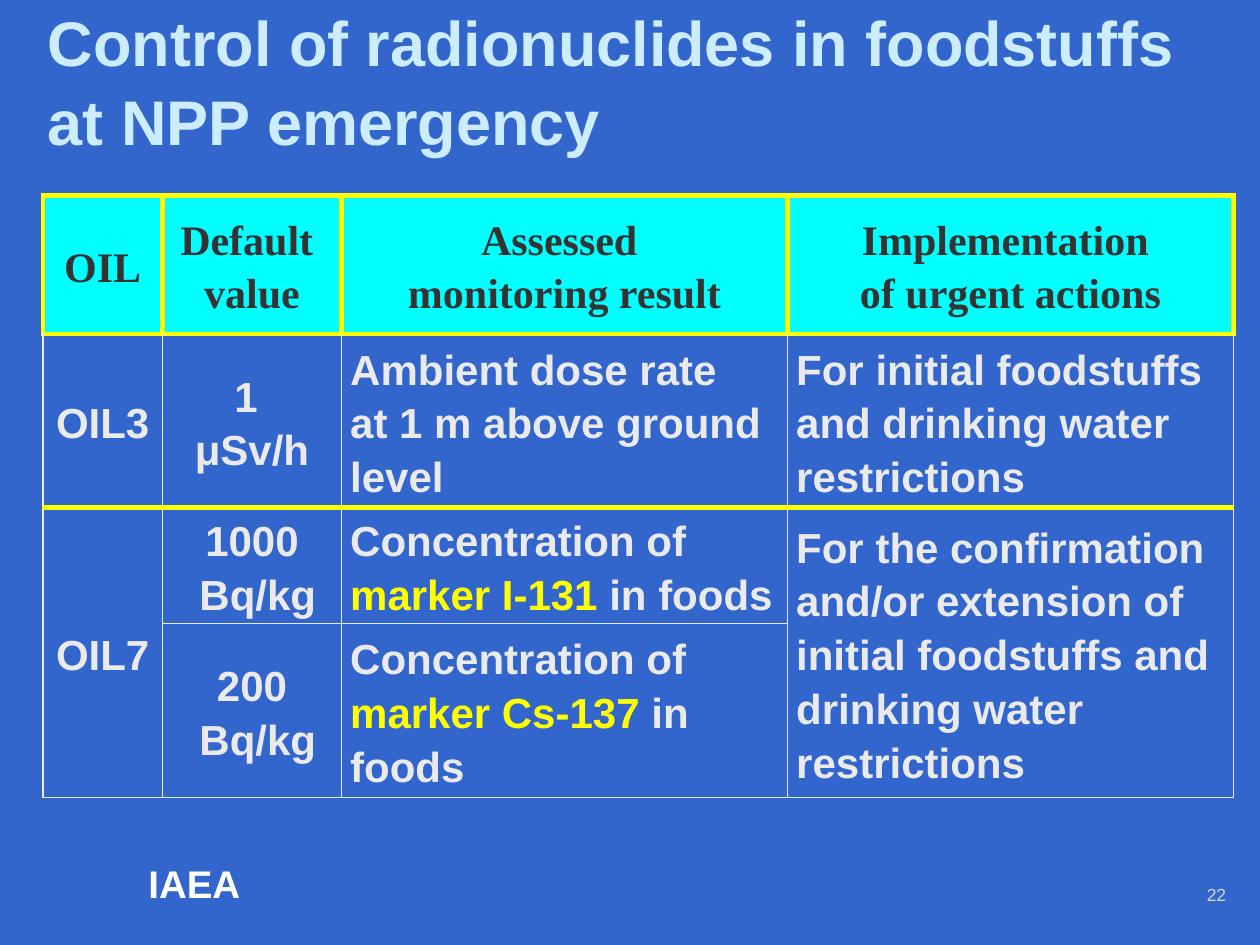
from lxml.etree import SubElement
from pptx import Presentation
from pptx.dml.color import RGBColor
from pptx.enum.text import MSO_ANCHOR as Anchor, MSO_AUTO_SIZE as AutoSize, PP_ALIGN as Align
from pptx.oxml import parse_xml
from pptx.oxml.ns import nsdecls, qn
from pptx.util import Inches, Pt

BLUE, CYAN, YELLOW = "3366CC", "00FFFF", "FFFF00"
PALE, DARK = "EAEAEA", "333333"
COLUMNS = [0.95, 1.42, 3.54, 3.54]
ROWS = [1.1, 1.28, 0.85, 1.28]
HEADINGS = ["OIL", "Default \nvalue", "Assessed \nmonitoring result",
            "Implementation \nof urgent actions"]


def marker_text(nuclide):
    """Return the spans that describe one marker nuclide."""
    return [("Concentration of ", PALE), (f"marker {nuclide}", YELLOW), (" in foods", PALE)]


BODY = [
    ["OIL3", "1 \nμSv/h", ["Ambient dose rate", "at 1 m above ground level"],
     "For initial foodstuffs and drinking water restrictions"],
    ["OIL7 ", "1000\n Bq/kg", [marker_text("I-131")],
     "For the confirmation and/or extension of initial foodstuffs and drinking water restrictions"],
    [None, "200\n Bq/kg", [marker_text("Cs-137")], None],
]


def color(value):
    """Turn a hex string into a colour."""
    return RGBColor.from_string(value)


def add_span(para, text, size, tint, font="Arial", bold=True):
    """Add text to a paragraph, with a line break at each newline."""
    for index, line in enumerate(text.split("\n")):
        if index:
            para.add_line_break()
        span = para.add_run()
        span.text = line
        span.font.size = Pt(size)
        span.font.name = font
        span.font.bold = bold
        span.font.color.rgb = color(tint)


def place(shape, left, top, width, height):
    """Set the position and size of a shape."""
    shape.left, shape.top = Inches(left), Inches(top)
    shape.width, shape.height = Inches(width), Inches(height)


def add_title(page, text):
    """Fill the title placeholder."""
    title = page.shapes.title
    place(title, 0.28, 0.21, 9.33, 0.83)
    frame = title.text_frame
    frame.word_wrap = True
    frame.auto_size = AutoSize.NONE
    frame.vertical_anchor = Anchor.MIDDLE
    para = frame.paragraphs[0]
    para.alignment = Align.LEFT
    para.line_spacing = 1.05
    add_span(para, text, 36, "CCECFF")


def add_label(page, text, bounds, size, tint, bold=False, align=Align.LEFT):
    """Add a one-line text box."""
    box = page.shapes.add_textbox(*map(Inches, bounds))
    box.text_frame.word_wrap = True
    para = box.text_frame.paragraphs[0]
    para.alignment = align
    add_span(para, text, size, tint, bold=bold)


def set_borders(cell, edges):
    """Draw the cell borders, given as side, colour and width."""
    properties = cell._tc.get_or_add_tcPr()
    for index, (side, tint, width) in enumerate(edges):
        line = parse_xml(f'<a:ln{side} {nsdecls("a")} w="{Pt(width)}"/>')
        fill = SubElement(line, qn("a:solidFill"))
        SubElement(fill, qn("a:srgbClr"), val=tint)
        properties.insert(index, line)


def fill_cell(cell, content, align, tint=PALE, font="Arial"):
    """Write the paragraphs of a table cell."""
    cell.vertical_anchor = Anchor.MIDDLE
    cell.margin_left = cell.margin_right = Inches(0.07)
    cell.margin_top = cell.margin_bottom = 0
    lines = [content] if isinstance(content, str) else content
    for index, line in enumerate(lines):
        frame = cell.text_frame
        para = frame.add_paragraph() if index else frame.paragraphs[0]
        para.alignment = align
        para.line_spacing = 1.15
        for text, shade in [(line, tint)] if isinstance(line, str) else line:
            add_span(para, text, 24, shade, font)


def style_cell(cell, row):
    """Set the fill and borders that belong to a row."""
    if row == 0:
        cell.fill.solid()
        cell.fill.fore_color.rgb = color(CYAN)
    else:
        cell.fill.background()
    thin, thick = (PALE, 1), (YELLOW, 3)
    side = thick if row == 0 else thin
    top = thick if row < 3 else thin
    bottom = thick if row < 2 else thin
    set_borders(cell, [("L", *side), ("R", *side), ("T", *top), ("B", *bottom)])


def add_oil_table(page):
    """Add the table of operational intervention levels."""
    bounds = map(Inches, (0.34, 1.55, sum(COLUMNS), sum(ROWS)))
    table = page.shapes.add_table(len(ROWS), len(COLUMNS), *bounds).table
    table.first_row = table.horz_banding = False
    for column, width in zip(table.columns, COLUMNS):
        column.width = Inches(width)
    for row, height in zip(table.rows, ROWS):
        row.height = Inches(height)
    for column in (0, 3):
        table.cell(2, column).merge(table.cell(3, column))
    for row, contents in enumerate([HEADINGS, *BODY]):
        for column, content in enumerate(contents):
            cell = table.cell(row, column)
            style_cell(cell, row)
            if content is None:
                continue
            if row == 0:
                fill_cell(cell, content, Align.CENTER, DARK, "Times New Roman")
            else:
                fill_cell(cell, content, Align.CENTER if column < 2 else Align.LEFT)


def main():
    """Build the slide and save it."""
    deck = Presentation()
    deck.slide_width, deck.slide_height = Inches(10), Inches(7.5)
    page = deck.slides.add_slide(deck.slide_layouts[5])
    page.background.fill.solid()
    page.background.fill.fore_color.rgb = color(BLUE)
    add_label(page, "IAEA", (1.08, 6.78, 1, 0.47), 22, "FFFFFF", bold=True)
    add_title(page, "Control of radionuclides in foodstuffs at NPP emergency")
    add_label(page, "22", (9.27, 6.97, 0.56, 0.32), 10, "D5D7D8", align=Align.RIGHT)
    add_oil_table(page)
    deck.save("out.pptx")


if __name__ == "__main__":
    main()
